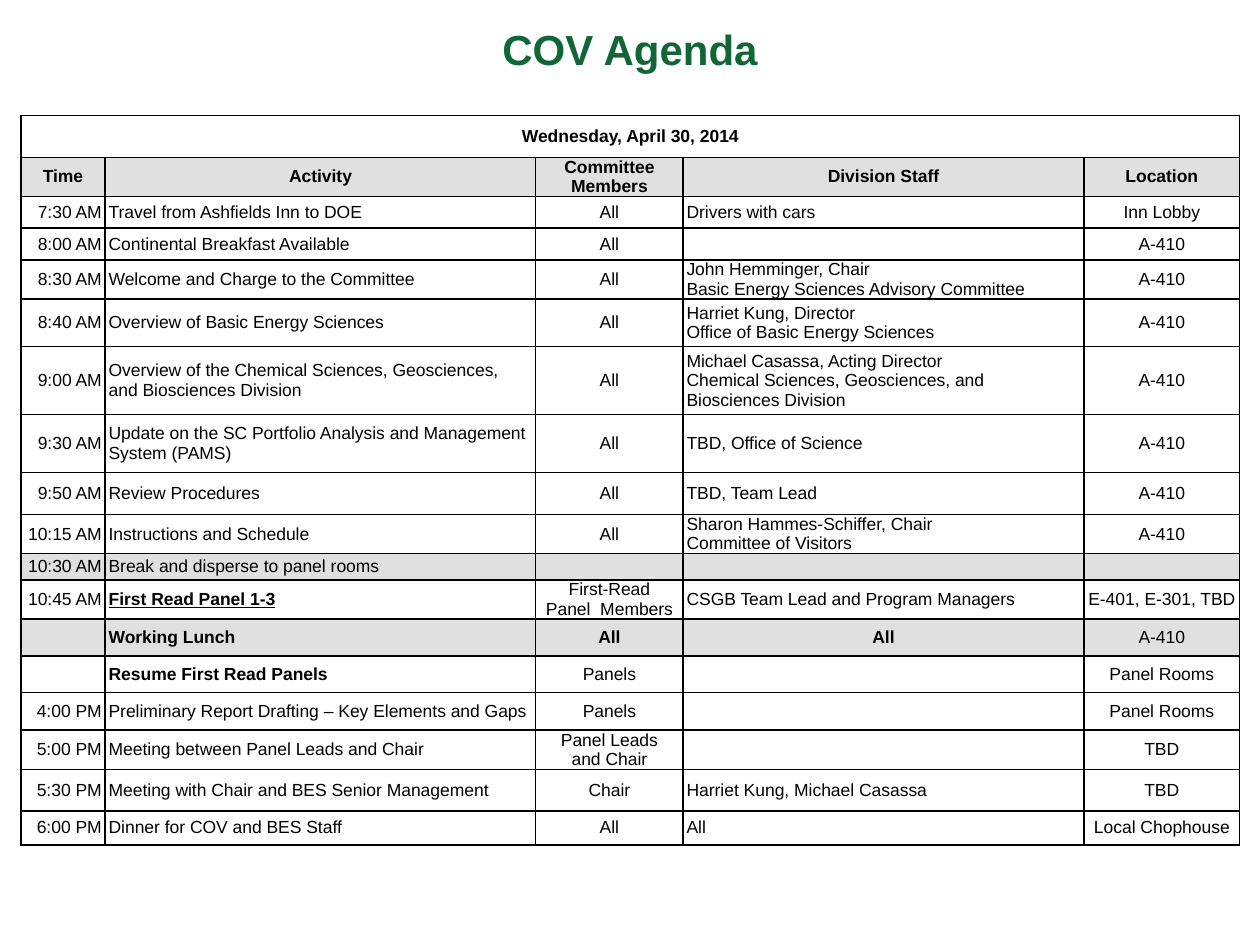
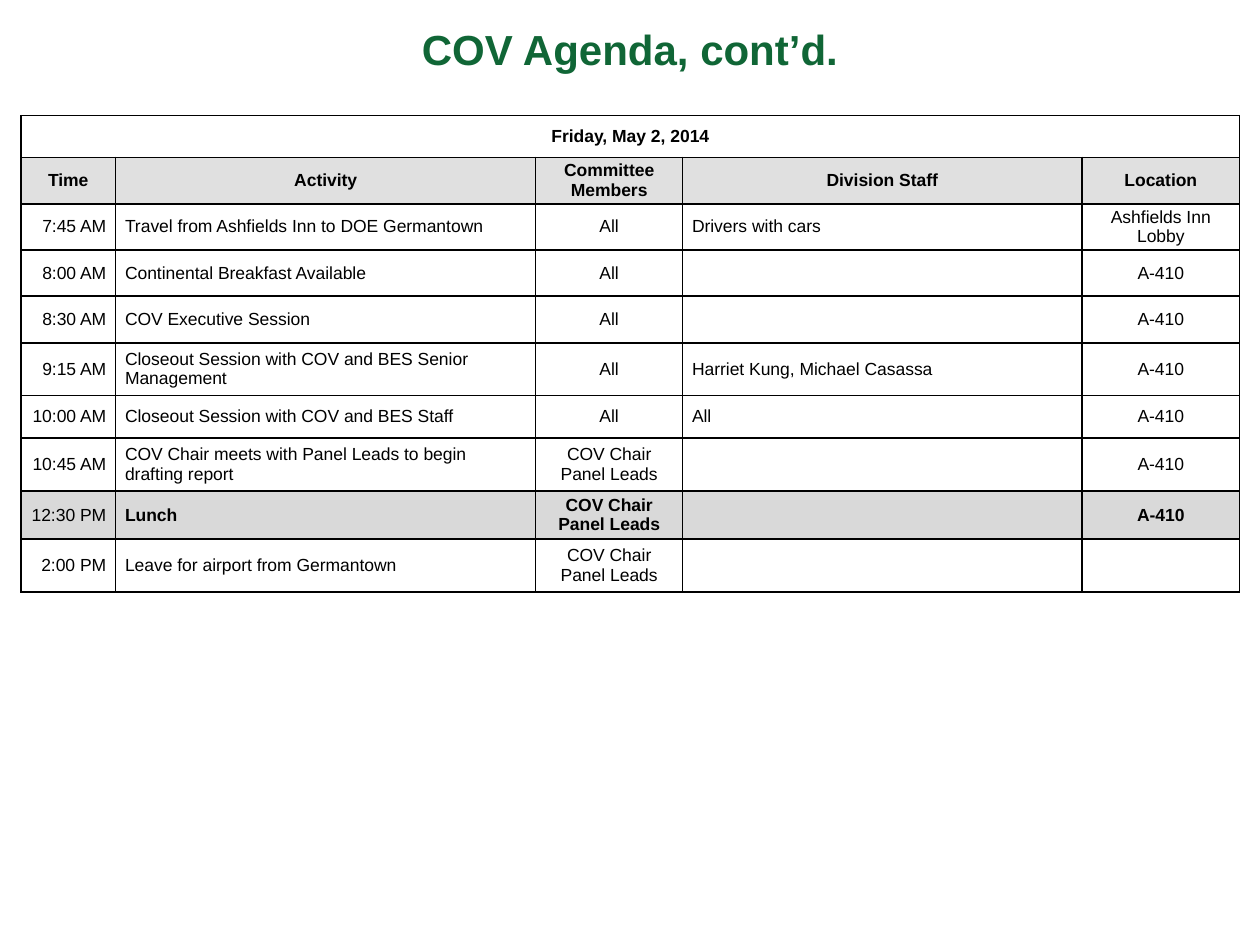
"""Builds the two agenda slides for the Committee of Visitors meeting."""
from dataclasses import dataclass

from lxml import etree
from pptx import Presentation
from pptx.dml.color import RGBColor
from pptx.enum.text import MSO_ANCHOR, PP_ALIGN
from pptx.oxml.ns import qn
from pptx.util import Cm, Pt

LEFT, CENTER, RIGHT = PP_ALIGN.LEFT, PP_ALIGN.CENTER, PP_ALIGN.RIGHT
MIDDLE = MSO_ANCHOR.MIDDLE


@dataclass(frozen=True)
class Theme:
    """Colours, font and type sizes of the deck."""
    font: str = "Arial"
    title_size: int = 24
    body_size: int = 10
    body_leading: float = 11.15
    border_width: int = 1
    green: str = "106636"
    black: str = "000000"
    white: str = "FFFFFF"
    light_gray: str = "E0E0E0"
    mid_gray: str = "D9D9D9"


THEME = Theme()


def strong(text, **text_format):
    """Return a cell entry in bold with any further format."""
    return {"text": text, "bold": True, **text_format}


COLUMN_ALIGNMENT = (RIGHT, LEFT, CENTER, LEFT, CENTER)
HEADINGS = ("Time", "Activity", "Committee Members", "Division Staff", "Location")
WHITE, LIGHT, MID = THEME.white, THEME.light_gray, THEME.mid_gray

AGENDAS = [
    {
        "title": "COV Agenda",
        "date": "Wednesday, April 30, 2014",
        "side_margin": 0.07,
        "columns": (1.7, 8.68, 2.97, 8.08, 3.14),
        "date_height": 0.84,
        "heading_height": 0.79,
        "rows": [
            (0.64, WHITE, ("7:30 AM", "Travel from Ashfields Inn to DOE", "All",
                           "Drivers with cars", "Inn Lobby")),
            (0.64, WHITE, ("8:00 AM", "Continental Breakfast Available", "All", "", "A-410")),
            (0.79, WHITE, ("8:30 AM", "Welcome and Charge to the Committee", "All",
                           "John Hemminger, Chair\nBasic Energy Sciences Advisory Committee",
                           "A-410")),
            (0.96, WHITE, ("8:40 AM", "Overview of Basic Energy Sciences", "All",
                           "Harriet Kung, Director\nOffice of Basic Energy Sciences", "A-410")),
            (1.37, WHITE, ("9:00 AM",
                           "Overview of the Chemical Sciences, Geosciences,\n"
                           "and Biosciences Division", "All",
                           "Michael Casassa, Acting Director\n"
                           "Chemical Sciences, Geosciences, and Biosciences Division", "A-410")),
            (1.17, WHITE, ("9:30 AM",
                           "Update on the SC Portfolio Analysis and Management System (PAMS)",
                           "All", "TBD, Office of Science", "A-410")),
            (0.84, WHITE, ("9:50 AM", "Review Procedures", "All", "TBD, Team Lead", "A-410")),
            (0.79, WHITE, ("10:15 AM", "Instructions and Schedule", "All",
                           "Sharon Hammes-Schiffer, Chair\nCommittee of Visitors", "A-410")),
            (0.53, LIGHT, ("10:30 AM", "Break and disperse to panel rooms", "", "", "")),
            (0.79, WHITE, ("10:45 AM", strong("First Read Panel 1-3", underline=True),
                           "First-Read\nPanel  Members",
                           "CSGB Team Lead and Program Managers", "E-401, E-301, TBD")),
            (0.74, LIGHT, ("", strong("Working Lunch"), strong("All"),
                           strong("All", align=CENTER), "A-410")),
            (0.74, WHITE, ("", strong("Resume First Read Panels"), "Panels", "", "Panel Rooms")),
            (0.76, WHITE, ("4:00 PM", "Preliminary Report Drafting – Key Elements and Gaps",
                           "Panels", "", "Panel Rooms")),
            (0.79, WHITE, ("5:00 PM", "Meeting between Panel Leads and Chair",
                           "Panel Leads\nand Chair", "", "TBD")),
            (0.84, WHITE, ("5:30 PM", "Meeting with Chair and BES Senior Management", "Chair",
                           "Harriet Kung, Michael Casassa", "TBD")),
            (0.68, WHITE, ("6:00 PM", "Dinner for COV and BES Staff", "All", "All",
                           "Local Chophouse")),
        ],
    },
    {
        "title": "COV Agenda, cont’d.",
        "date": "Friday, May 2, 2014",
        "side_margin": 0.19,
        "columns": (1.91, 8.47, 2.96, 8.05, 3.18),
        "date_height": 0.84,
        "heading_height": 0.94,
        "rows": [
            (0.93, WHITE, ("7:45 AM", "Travel from Ashfields Inn to DOE Germantown", "All",
                           "Drivers with cars", "Ashfields Inn\nLobby")),
            (0.93, WHITE, ("8:00 AM", "Continental Breakfast Available", "All", "", "A-410")),
            (0.94, WHITE, ("8:30 AM", "COV Executive Session", "All", "", "A-410")),
            (1.06, WHITE, ("9:15 AM", "Closeout Session with COV and BES Senior Management",
                           "All", "Harriet Kung, Michael Casassa", "A-410")),
            (0.86, WHITE, ("10:00 AM", "Closeout Session with COV and BES Staff", "All", "All",
                           "A-410")),
            (1.07, WHITE, ("10:45 AM", "COV Chair meets with Panel Leads to begin drafting report",
                           "COV Chair Panel Leads", "", "A-410")),
            (0.97, MID, ("12:30 PM", strong("Lunch"), strong("COV Chair Panel Leads"), "",
                         strong("A-410"))),
            (1.06, WHITE, ("2:00 PM", "Leave for airport from Germantown",
                           "COV Chair\nPanel Leads", "", "")),
        ],
    },
]


def write_text(holder, text, *, size=THEME.body_size, color=THEME.black, align=LEFT,
               bold=False, underline=False, margins=(0, 0), leading=None):
    """Write one paragraph per line into a text frame or table cell."""
    holder.vertical_anchor = MIDDLE
    holder.margin_left = holder.margin_right = Cm(margins[0])
    holder.margin_top = holder.margin_bottom = Cm(margins[1])
    frame = getattr(holder, "text_frame", holder)
    frame.word_wrap = True
    for index, line in enumerate(text.split("\n")):
        paragraph = frame.add_paragraph() if index else frame.paragraphs[0]
        paragraph.alignment = align
        if leading:
            paragraph.line_spacing = Pt(leading)
        if not line:
            paragraph._p.get_or_add_endParaRPr().set("sz", str(size * 100))
            continue
        span = paragraph.add_run()
        span.text = line
        span.font.name = THEME.font
        span.font.size = Pt(size)
        span.font.bold = bold
        span.font.underline = underline
        span.font.color.rgb = RGBColor.from_string(color)


def style_cell(cell, fill):
    """Fill a cell and draw its four borders."""
    cell.fill.solid()
    cell.fill.fore_color.rgb = RGBColor.from_string(fill)
    properties = cell._tc.get_or_add_tcPr()
    for index, side in enumerate(("lnL", "lnR", "lnT", "lnB")):
        border = etree.Element(qn(f"a:{side}"), w=str(Pt(THEME.border_width)))
        solid = etree.SubElement(border, qn("a:solidFill"))
        etree.SubElement(solid, qn("a:srgbClr"), val=THEME.black)
        properties.insert(index, border)


def add_title(page, text):
    """Add the centred slide title."""
    box = page.shapes.add_textbox(Cm(0), Cm(-0.61), Cm(25.4), Cm(3.18))
    write_text(box.text_frame, text, size=THEME.title_size, color=THEME.green,
               align=CENTER, bold=True, margins=(0.25, 0.13))


def add_agenda_table(page, agenda):
    """Add the day's schedule below a date row and a heading row."""
    date_cells = [strong(agenda["date"], align=CENTER)] + [""] * (len(HEADINGS) - 1)
    heading_cells = [strong(heading, align=CENTER) for heading in HEADINGS]
    rows = [(agenda["date_height"], WHITE, date_cells),
            (agenda["heading_height"], LIGHT, heading_cells), *agenda["rows"]]
    widths = agenda["columns"]
    table = page.shapes.add_table(len(rows), len(widths), Cm(0.42), Cm(2.33), Cm(sum(widths)),
                                  Cm(sum(height for height, _, _ in rows))).table
    table.first_row = table.horz_banding = False
    for column, width in zip(table.columns, widths):
        column.width = Cm(width)
    for row, (height, fill, entries) in zip(table.rows, rows):
        row.height = Cm(height)
        for cell, entry, align in zip(row.cells, entries, COLUMN_ALIGNMENT):
            text_format = entry if isinstance(entry, dict) else {"text": entry}
            write_text(cell, **{"align": align, "margins": (agenda["side_margin"], 0),
                                "leading": THEME.body_leading, **text_format})
            style_cell(cell, fill)
    table.cell(0, 0).merge(table.cell(0, len(widths) - 1))


def main():
    """Build and save the deck."""
    deck = Presentation()
    deck.slide_width, deck.slide_height = Cm(25.4), Cm(19.05)
    for agenda in AGENDAS:
        page = deck.slides.add_slide(deck.slide_layouts[6])
        add_title(page, agenda["title"])
        add_agenda_table(page, agenda)
    deck.save("out.pptx")


if __name__ == "__main__":
    main()
